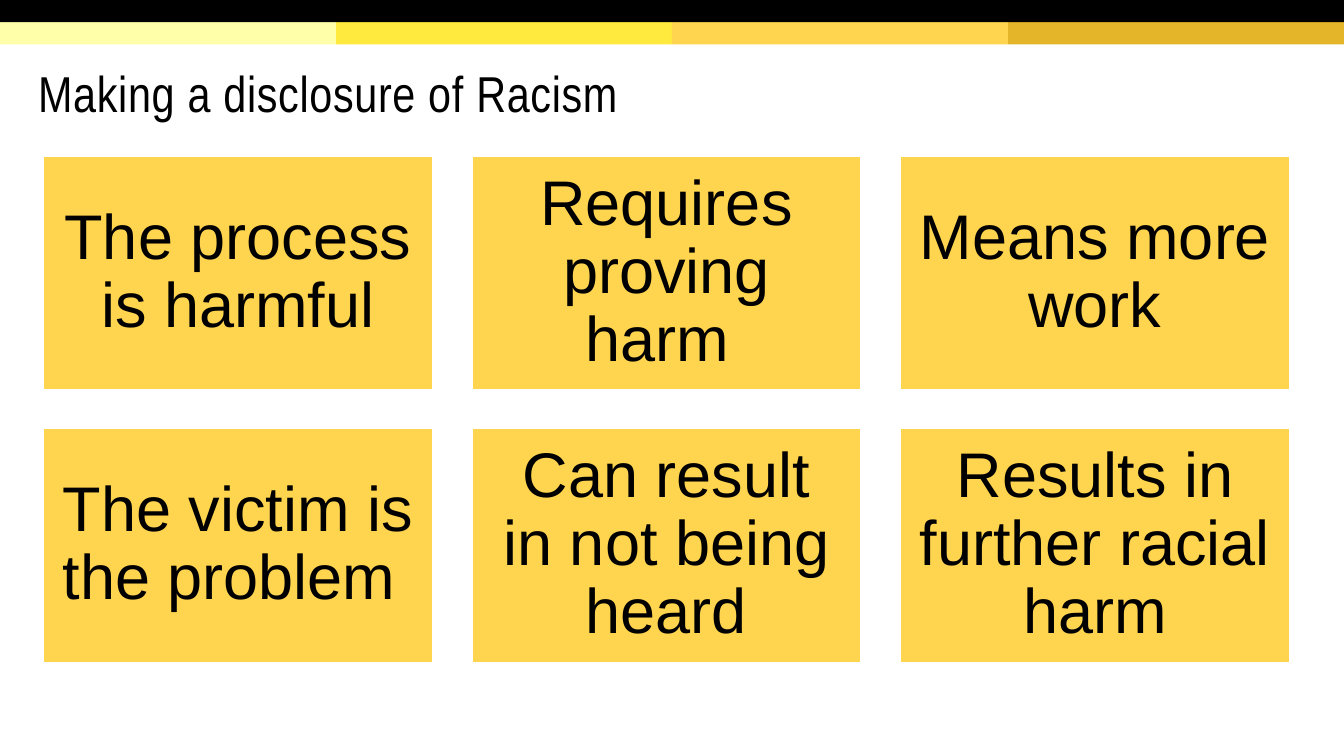
from pptx import Presentation
from pptx.dml.color import RGBColor
from pptx.enum.shapes import MSO_SHAPE
from pptx.enum.text import MSO_ANCHOR, PP_ALIGN
from pptx.util import Inches, Pt

RECT = MSO_SHAPE.RECTANGLE
MIDDLE = MSO_ANCHOR.MIDDLE
CENTER = PP_ALIGN.CENTER

BLACK = RGBColor(0x00, 0x00, 0x00)
WHITE = RGBColor(0xFF, 0xFF, 0xFF)
PALE = RGBColor(0xFF, 0xFF, 0xAA)
LEMON = RGBColor(0xFF, 0xEA, 0x3D)
AMBER = RGBColor(0xFF, 0xD5, 0x4F)
GOLD = RGBColor(0xE4, 0xB4, 0x29)

WIDTH = 13.33
BAND = 0.22

deck = Presentation()
deck.slide_width = Inches(WIDTH)
deck.slide_height = Inches(7.5)
slide = deck.slides.add_slide(deck.slide_layouts[6])


def add_rect(left, top, width, height, color):
    rect = slide.shapes.add_shape(
        RECT, Inches(left), Inches(top), Inches(width), Inches(height))
    rect.shadow.inherit = False
    rect.fill.solid()
    rect.fill.fore_color.rgb = color
    rect.line.fill.background()
    return rect


def set_text(shape, text, font, size, spacing):
    frame = shape.text_frame
    frame.word_wrap = True
    frame.vertical_anchor = MIDDLE
    frame.text = text
    para = frame.paragraphs[0]
    para.line_spacing = spacing
    run = para.runs[0]
    run.font.name = font
    run.font.size = Pt(size)
    run.font.color.rgb = BLACK
    return para


# Bands across the top
step = WIDTH / 4
for i, color in enumerate([PALE, LEMON, AMBER, GOLD]):
    add_rect(i * step, BAND, step, BAND, color)
add_rect(0, 0, WIDTH, BAND, BLACK)

# Title
title = slide.shapes.add_textbox(
    Inches(0.28), Inches(0.47), Inches(12.65), Inches(0.98))
para = set_text(title, "Making a disclosure of Racism", "Arial Narrow", 36, 0.85)
para.runs[0].font._element.set("spc", "50")

# Grid of cards, three to a row
cards = [
    "The process is harmful",
    "Requires proving harm ",
    "Means more work",
    "The victim is the problem ",
    "Can result in not being heard",
    "Results in further racial harm",
]
for i, text in enumerate(cards):
    row, col = divmod(i, 3)
    card = add_rect(0.43 + col * 4.25, 1.55 + row * 2.7, 3.86, 2.32, AMBER)
    card.line.color.rgb = WHITE
    card.line.width = Pt(1)
    frame = card.text_frame
    frame.margin_left = frame.margin_right = Inches(0.19)
    frame.margin_top = frame.margin_bottom = Inches(0.19)
    para = set_text(card, text, "Arial", 45, 0.9)
    para.alignment = CENTER

deck.save("out.pptx")
